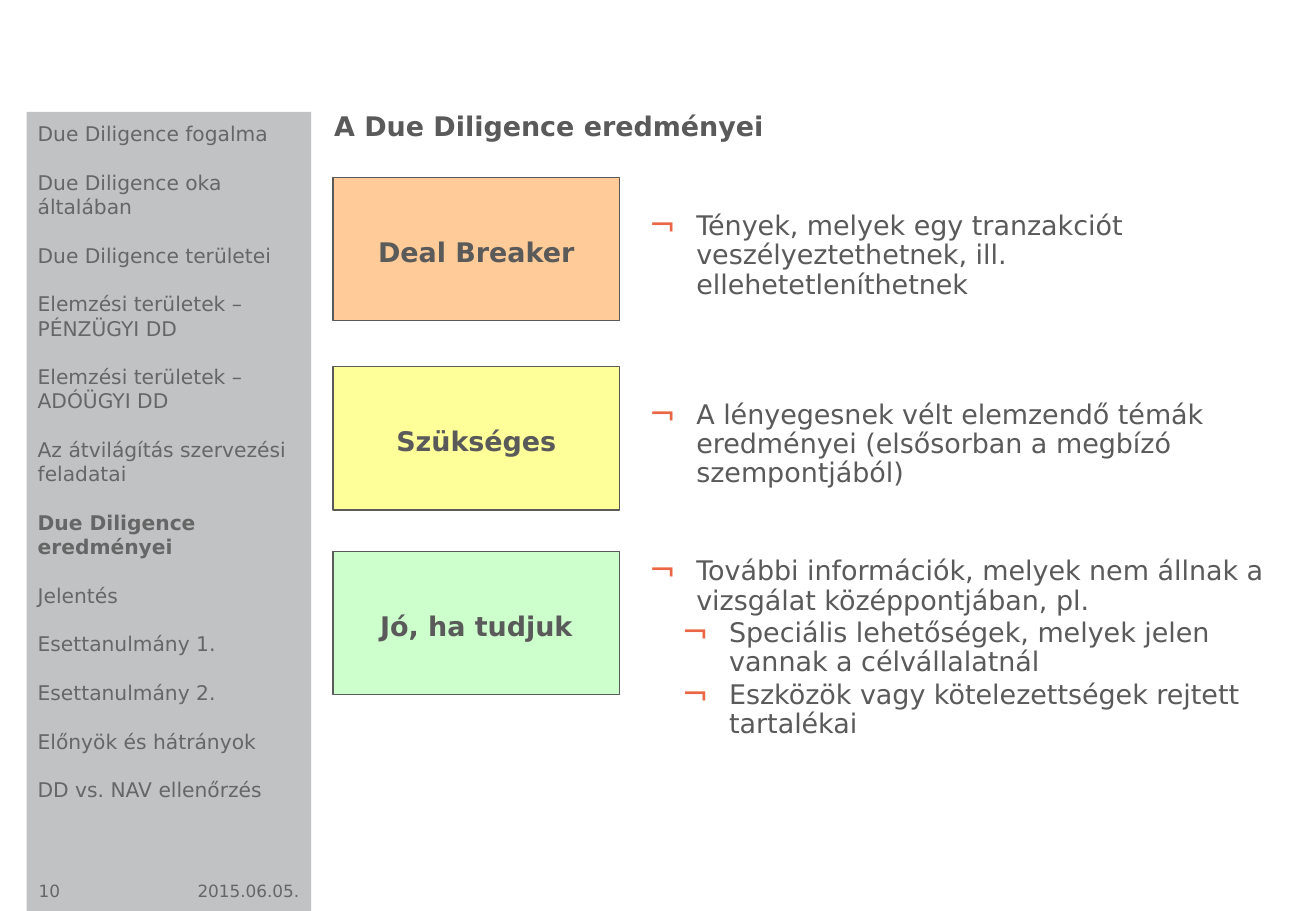
import dataclasses

import lxml.etree
import pptx
import pptx.dml.color
import pptx.enum.shapes
import pptx.enum.text
import pptx.oxml.ns
import pptx.util

Inches = pptx.util.Inches
Pt = pptx.util.Pt
Align = pptx.enum.text.PP_ALIGN
Anchor = pptx.enum.text.MSO_ANCHOR


@dataclasses.dataclass(frozen=True)
class Theme:
    font: str = "DejaVu Sans"
    ink: str = "5A5A5A"
    muted: str = "666666"
    panel: str = "C1C2C4"
    accent: str = "EA6645"
    red: str = "FFCC99"
    yellow: str = "FFFF99"
    green: str = "CCFFCC"
    large: int = 16
    menu: int = 12
    small: int = 10


def color(value):
    return pptx.dml.color.RGBColor.from_string(value)


class Deck:
    def __init__(self, theme, width, height):
        self.theme = theme
        self.file = pptx.Presentation()
        self.file.slide_width = Inches(width)
        self.file.slide_height = Inches(height)
        self.slide = self.file.slides.add_slide(self.file.slide_layouts[3])

    def place(self, index, area):
        holder = self.slide.placeholders[index]
        holder.left, holder.top, holder.width, holder.height = map(Inches, area)
        return holder

    def frame(self, shape, insets, anchor=Anchor.TOP, wrap=True):
        frame = shape.text_frame
        frame.auto_size = pptx.enum.text.MSO_AUTO_SIZE.NONE
        frame.word_wrap = wrap
        frame.vertical_anchor = anchor
        (frame.margin_left, frame.margin_top,
         frame.margin_right, frame.margin_bottom) = map(Inches, insets)
        return frame

    def style(self, para, size, ink, bold=False, align=Align.LEFT):
        para.alignment = align
        for run in para.runs:
            run.font.name = self.theme.font
            run.font.size = Pt(size)
            run.font.bold = bold
            run.font.color.rgb = color(ink)

    def bullet(self, para, mark, left=0, hang=0):
        props = para._p.get_or_add_pPr()
        props.set("marL", str(Inches(left)))
        props.set("indent", str(-Inches(hang)))

        def add(parent, tag, **values):
            return lxml.etree.SubElement(
                parent, pptx.oxml.ns.qn("a:" + tag), **values)

        if mark:
            add(add(props, "buClr"), "srgbClr", val=self.theme.accent)
            add(props, "buSzPct", val="120000")
            add(props, "buFont", typeface=self.theme.font)
            add(props, "buChar", char=mark)
        else:
            add(props, "buNone")

    def title(self, text, area):
        frame = self.frame(self.place(0, area), (0, 0, 0, 0))
        frame.text = text
        self.style(frame.paragraphs[0], self.theme.large, self.theme.ink, True)

    def points(self, items, area):
        frame = self.frame(self.place(2, area), (0, 0, 0, 0))
        frame.text = "\n".join(text for text, level, gap in items)
        for para, (text, level, gap) in zip(frame.paragraphs, items):
            para.level = level
            self.bullet(para, "¬", 0.39 + 0.27 * level, 0.39)
            para.line_spacing = 0.9
            para.space_before = Pt(gap)
            self.style(para, self.theme.large, self.theme.ink)

    def menu(self, items, active, area):
        frame = self.frame(self.place(1, area), (0.1, 0.05, 0.1, 0.01))
        frame.text = "\n".join(items)
        for index, para in enumerate(frame.paragraphs):
            self.bullet(para, None)
            para.space_before = Pt(14.4 if index else 0)
            self.style(para, self.theme.menu, self.theme.muted,
                       items[index] == active)

    def box(self, area, fill, text="", line=None):
        shape = self.slide.shapes.add_shape(
            pptx.enum.shapes.MSO_SHAPE.RECTANGLE, *map(Inches, area))
        shape.shadow.inherit = False
        shape.fill.solid()
        shape.fill.fore_color.rgb = color(fill)
        if line:
            shape.line.color.rgb = color(line)
            shape.line.width = Pt(0.75)
        else:
            shape.line.fill.background()
        if text:
            frame = self.frame(shape, (0.1, 0.05, 0.1, 0.01),
                               Anchor.MIDDLE, False)
            frame.text = text
            self.style(frame.paragraphs[0], self.theme.large, self.theme.ink,
                       True, Align.CENTER)
        return shape

    def panel(self, area):
        shape = self.box(area, self.theme.panel)
        self.slide.shapes._spTree.insert(2, shape._element)

    def note(self, text, area, align, anchor):
        shape = self.slide.shapes.add_textbox(*map(Inches, area))
        frame = self.frame(shape, (0.1, 0.05, 0.1, 0.05), anchor)
        frame.text = text
        self.style(frame.paragraphs[0], self.theme.small, self.theme.muted,
                   align=align)


def main():
    theme = Theme()
    deck = Deck(theme, 10.83, 7.5)
    deck.panel((0.22, 0.92, 2.34, 6.58))
    deck.note("2015.06.05.", (1.39, 7.2, 1.17, 0.27), Align.RIGHT, Anchor.BOTTOM)
    deck.note("10", (0.22, 7.2, 0.79, 0.27), Align.LEFT, Anchor.TOP)
    deck.title("A Due Diligence eredményei", (2.75, 0.9, 7.86, 0.27))

    grades = [
        ("Deal Breaker", theme.red, 1.46),
        ("Szükséges", theme.yellow, 3.02),
        ("Jó, ha tudjuk", theme.green, 4.54),
    ]
    for text, fill, top in grades:
        deck.box((2.74, top, 2.36, 1.18), fill, text, theme.ink)

    deck.points([
        ("Tények, melyek egy tranzakciót veszélyeztethetnek, ill. "
         "ellehetetleníthetnek", 0, 0),
        ("A lényegesnek vélt elemzendő témák eredményei "
         "(elsősorban a megbízó szempontjából)", 0, 60),
        ("További információk, melyek nem állnak a vizsgálat "
         "középpontjában, pl.", 0, 41),
        ("Speciális lehetőségek, melyek jelen vannak a célvállalatnál", 1, 2),
        ("Eszközök vagy kötelezettségek rejtett tartalékai", 1, 2),
    ], (5.34, 1.75, 5.2, 4.4))

    deck.menu([
        "Due Diligence fogalma",
        "Due Diligence oka általában",
        "Due Diligence területei",
        "Elemzési területek – PÉNZÜGYI DD",
        "Elemzési területek – ADÓÜGYI DD",
        "Az átvilágítás szervezési feladatai",
        "Due Diligence eredményei",
        "Jelentés",
        "Esettanulmány 1.",
        "Esettanulmány 2.",
        "Előnyök és hátrányok",
        "DD vs. NAV ellenőrzés",
    ], "Due Diligence eredményei", (0.21, 0.95, 2.41, 6.27))
    deck.file.save("out.pptx")


if __name__ == "__main__":
    main()
